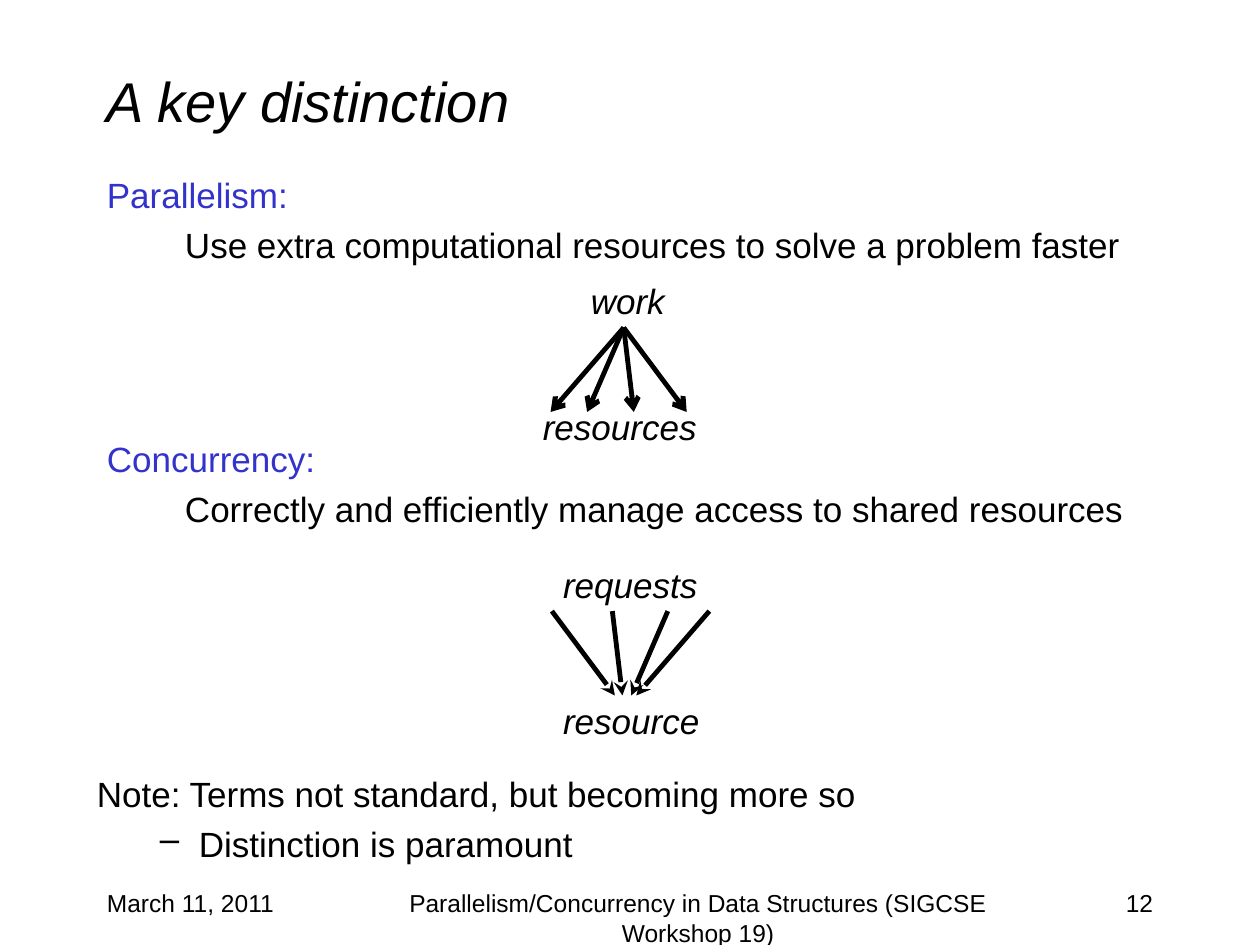
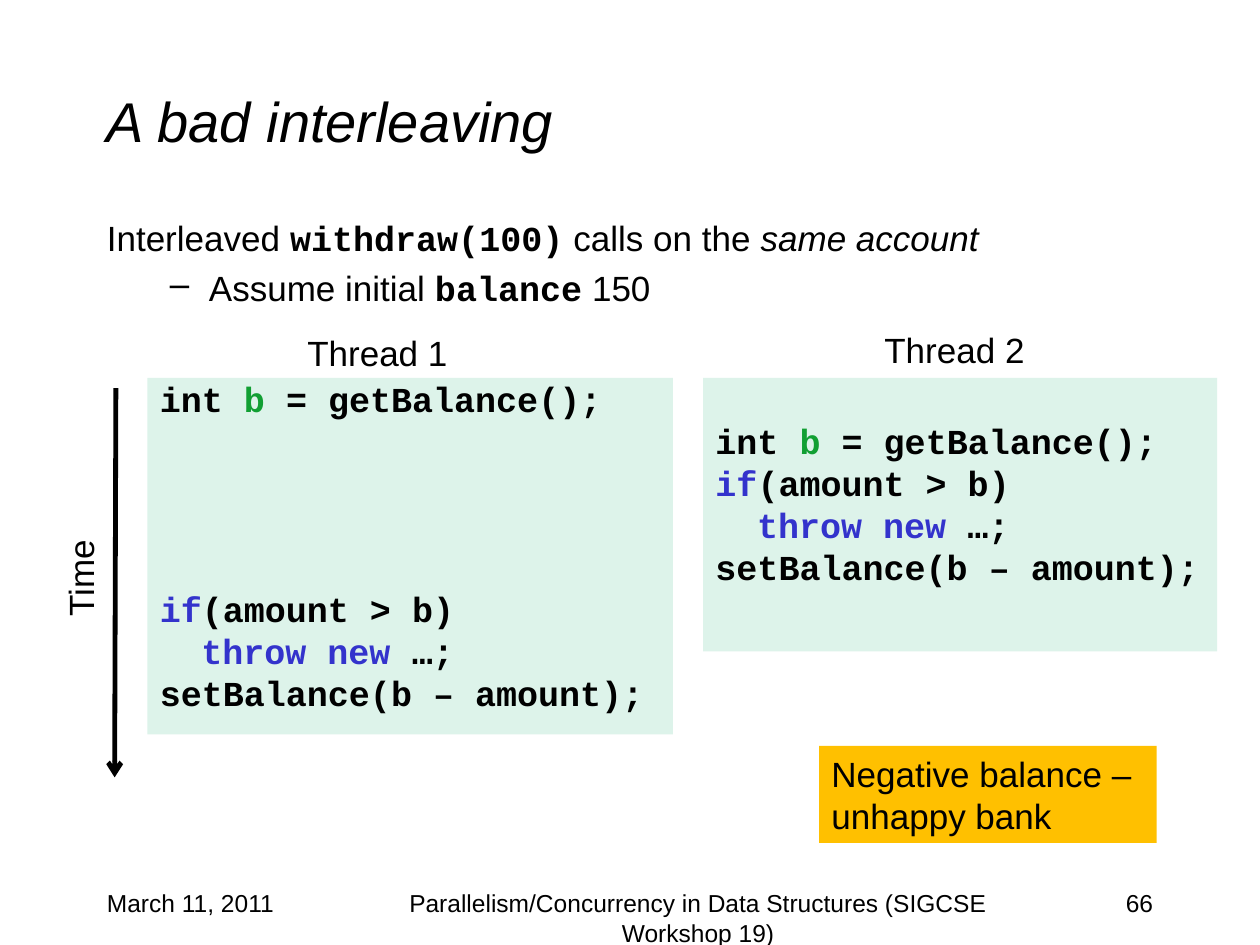
from lxml.etree import SubElement
from pptx import Presentation
from pptx.dml.color import RGBColor
from pptx.enum.shapes import MSO_CONNECTOR, MSO_SHAPE
from pptx.enum.text import MSO_ANCHOR as Anchor, PP_ALIGN as Align
from pptx.oxml.ns import qn
from pptx.util import Inches, Pt

WIDTH, HEIGHT = 10, 7.5
MARGIN, BODY_WIDTH = 0.75, 8.5
BLACK, BLUE, GREEN, MINT, AMBER = "000000", "3333CC", "119F33", "DDF3EA", "FFC000"
BODY_SIZE, TITLE_SIZE, FOOTER_SIZE = 20, 32, 14
CODE_PITCH, CODE_GAP, PROSE_GAP = 24, 4, 4.6
LABEL_HEIGHT = 0.44

STYLES = {
    "plain": {},
    "term": {"color": BLUE},
    "italic": {"italic": True},
    "inline": {"font": "Courier New", "bold": True},
    "code": {"font": "Courier New", "bold": True},
    "keyword": {"font": "Courier New", "bold": True, "color": BLUE},
    "variable": {"font": "Courier New", "bold": True, "color": GREEN},
}

DATE = "March 11, 2011"
FOOTER = "Parallelism/Concurrency in Data Structures (SIGCSE Workshop 19)"


def line(*runs, indent=0, bullet=None, before=PROSE_GAP):
    return {"runs": runs, "indent": indent, "bullet": bullet, "before": before}


def plain(text, **options):
    return line((text, "plain"), **options)


def definition(term, meaning):
    return [line((term, "term")), plain(meaning, indent=0.62)]


def code(*runs, skipped=0, indent=0):
    return line(*runs, indent=indent, before=CODE_GAP + skipped * CODE_PITCH)


PARALLELISM = definition("Parallelism:", "Use extra computational resources to solve a problem faster")
CONCURRENCY = definition("Concurrency:", "Correctly and efficiently manage access to shared resources")
NOTE = [plain("Note: Terms not standard, but becoming more so"),
        plain("Distinction is paramount", bullet="–")]
DIAGRAM_LABELS = [("work", 4.59, 2.17, 0.79), ("resources", 4.21, 3.17, 1.43),
                  ("requests", 4.37, 4.42, 1.28), ("resource", 4.37, 5.5, 1.29)]
WORK_X, RESOURCE_XS, WORK_YS = 4.95, (4.37, 4.66, 5.03, 5.45), (2.6, 3.27)
REQUEST_PATHS = [(5.63, 5.05), (5.3, 5.01), (4.86, 4.94), (4.38, 4.88)]
REQUEST_YS = (4.85, 5.52)

INTERLEAVING = [
    line(("Interleaved ", "plain"), ("withdraw(100)", "inline"),
         (" calls on the ", "plain"), ("same account", "italic")),
    line(("Assume initial ", "plain"), ("balance", "inline"), (" 150", "plain"), bullet="–"),
]


def withdraw_code(skipped):
    return [
        code(("int ", "code"), ("b", "variable"), (" = getBalance();", "code")),
        code(("if", "keyword"), ("(amount > b)", "code"), skipped=skipped),
        code(("throw new", "keyword"), (" …;", "code"), indent=0.33),
        code(("setBalance(b – amount);", "code")),
    ]


THREADS = [
    {"label": ("Thread 1", 2.34, 2.58, 1.32), "box": (1.17, 3, 4.17, 2.83), "start": 0, "pause": 4},
    {"label": ("Thread 2", 6.92, 2.56, 1.32), "box": (5.58, 3, 4.08, 2.17), "start": 1, "pause": 0},
]
OUTCOME = [plain("Negative balance –", before=0), plain("unhappy bank", before=0)]


def rgb(color):
    return RGBColor.from_string(color)


def write(shape, lines, size=BODY_SIZE, align=Align.LEFT, anchor=Anchor.TOP, wrap=True, spacing=None):
    frame = shape.text_frame
    frame.word_wrap = wrap
    frame.vertical_anchor = anchor
    for number, content in enumerate(lines):
        paragraph = frame.add_paragraph() if number else frame.paragraphs[0]
        paragraph.alignment = align
        paragraph.space_before = Pt(content["before"])
        if spacing:
            paragraph.line_spacing = Pt(spacing)
        properties = paragraph._p.get_or_add_pPr()
        properties.set("marL", str(Inches(0.81 if content["bullet"] else content["indent"])))
        properties.set("indent", str(Inches(-0.31 if content["bullet"] else 0)))
        if content["bullet"]:
            SubElement(properties, qn("a:buChar"), char=content["bullet"])
        for text, style_name in content["runs"]:
            style = STYLES[style_name]
            run = paragraph.add_run()
            run.text = text
            run.font.name = style.get("font", "Arial")
            run.font.size = Pt(size)
            run.font.bold = style.get("bold", False)
            run.font.italic = style.get("italic", False)
            run.font.color.rgb = rgb(style.get("color", BLACK))


def add_text(slide, box, lines, **options):
    shape = slide.shapes.add_textbox(*map(Inches, box))
    write(shape, lines, **options)
    return shape


def add_label(slide, text, left, top, width, style="plain"):
    return add_text(slide, (left, top, width, LABEL_HEIGHT), [line((text, style), before=0)], wrap=False)


def add_panel(slide, box, fill, lines, **options):
    shape = slide.shapes.add_shape(MSO_SHAPE.RECTANGLE, *map(Inches, box))
    shape.shadow.inherit = False
    shape.fill.solid()
    shape.fill.fore_color.rgb = rgb(fill)
    shape.line.fill.background()
    write(shape, lines, **options)
    return shape


def add_arrow(slide, start, end, head="arrow"):
    arrow = slide.shapes.add_connector(MSO_CONNECTOR.STRAIGHT, *map(Inches, (*start, *end)))
    arrow.line.color.rgb = rgb(BLACK)
    arrow.line.width = Pt(2.75)
    SubElement(arrow.line._get_or_add_ln(), qn("a:tailEnd"), type=head)
    SubElement(arrow._element.spPr, qn("a:effectLst"))


def add_slide(presentation, title, title_top, number):
    slide = presentation.slides.add_slide(presentation.slide_layouts[6])
    add_text(slide, (MARGIN, title_top, BODY_WIDTH, 1.25), [line((title, "italic"), before=0)],
             size=TITLE_SIZE, anchor=Anchor.MIDDLE)
    for text, left, width, align in [(DATE, MARGIN, 2.08, Align.LEFT),
                                     (FOOTER, 2.75, 5.58, Align.CENTER),
                                     (str(number), 7.17, 2.08, Align.RIGHT)]:
        add_text(slide, (left, 7, width, 0.5), [plain(text, before=0)], size=FOOTER_SIZE, align=align)
    return slide


def build_distinction(presentation):
    slide = add_slide(presentation, "A key distinction", 0.17, 12)
    add_text(slide, (MARGIN, 1.33, BODY_WIDTH, 0.92), PARALLELISM)
    add_text(slide, (MARGIN, 3.42, BODY_WIDTH, 0.92), CONCURRENCY)
    add_text(slide, (0.67, 6.08, 8.17, 0.92), NOTE)
    for resource_x in RESOURCE_XS:
        add_arrow(slide, (WORK_X, WORK_YS[0]), (resource_x, WORK_YS[1]))
    for request_x, resource_x in REQUEST_PATHS:
        add_arrow(slide, (request_x, REQUEST_YS[0]), (resource_x, REQUEST_YS[1]), "stealth")
    for label in DIAGRAM_LABELS:
        add_label(slide, *label, style="italic")


def build_interleaving(presentation):
    slide = add_slide(presentation, "A bad interleaving", 0.33, 66)
    add_text(slide, (MARGIN, 1.67, BODY_WIDTH, 0.92), INTERLEAVING)
    for thread in THREADS:
        panel = add_panel(slide, thread["box"], MINT, withdraw_code(thread["pause"]), spacing=20)
        panel.text_frame.margin_top = Inches(0.05) + Pt(CODE_PITCH * thread["start"])
        add_label(slide, *thread["label"])
    add_arrow(slide, (0.92, 3.08), (0.91, 6.17))
    add_label(slide, "Time", 0.23, 4.36, 0.82).rotation = 270
    add_panel(slide, (6.5, 5.92, 2.68, 0.77), AMBER, OUTCOME, wrap=False)


def main():
    presentation = Presentation()
    presentation.slide_width, presentation.slide_height = Inches(WIDTH), Inches(HEIGHT)
    build_distinction(presentation)
    build_interleaving(presentation)
    presentation.save("out.pptx")


if __name__ == "__main__":
    main()
